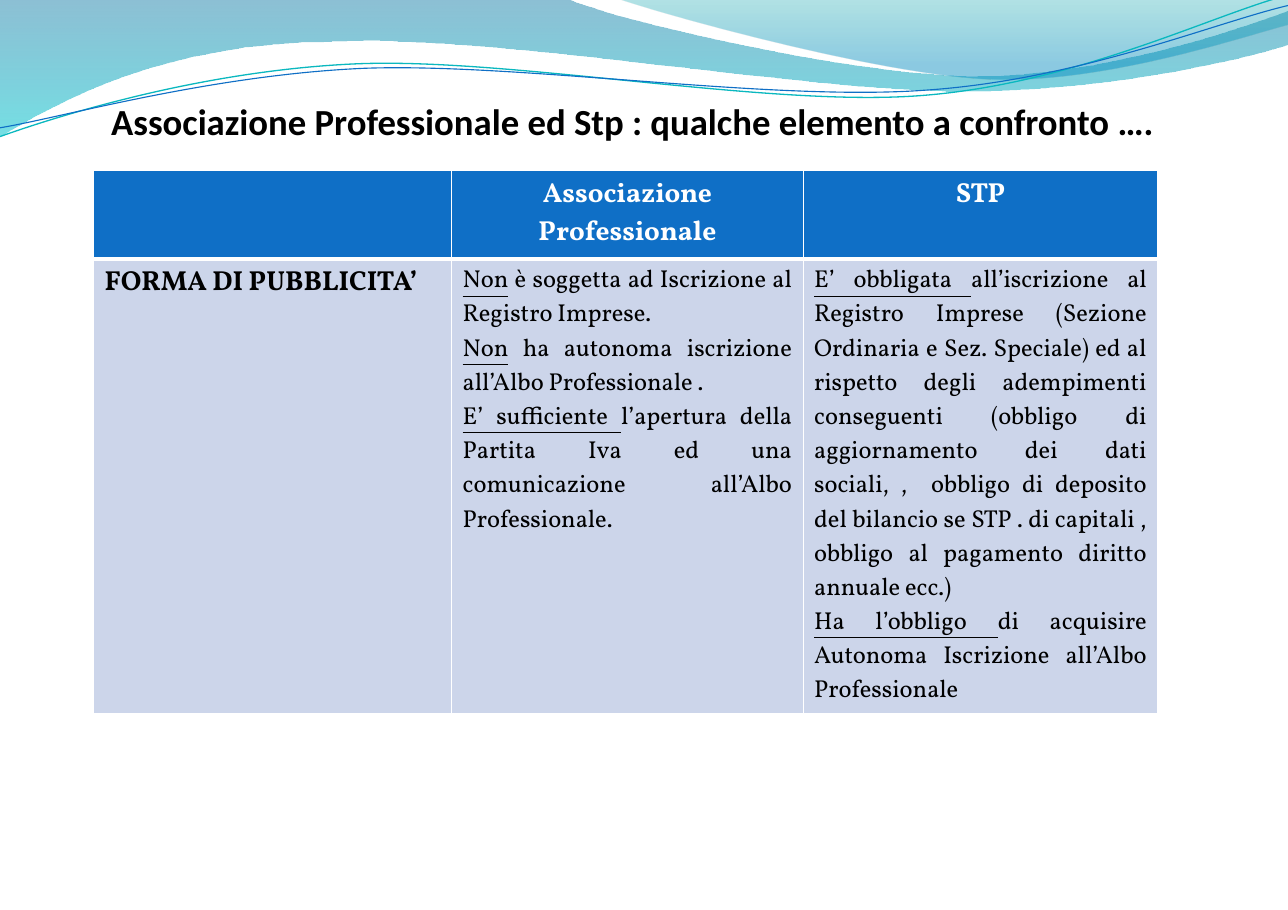
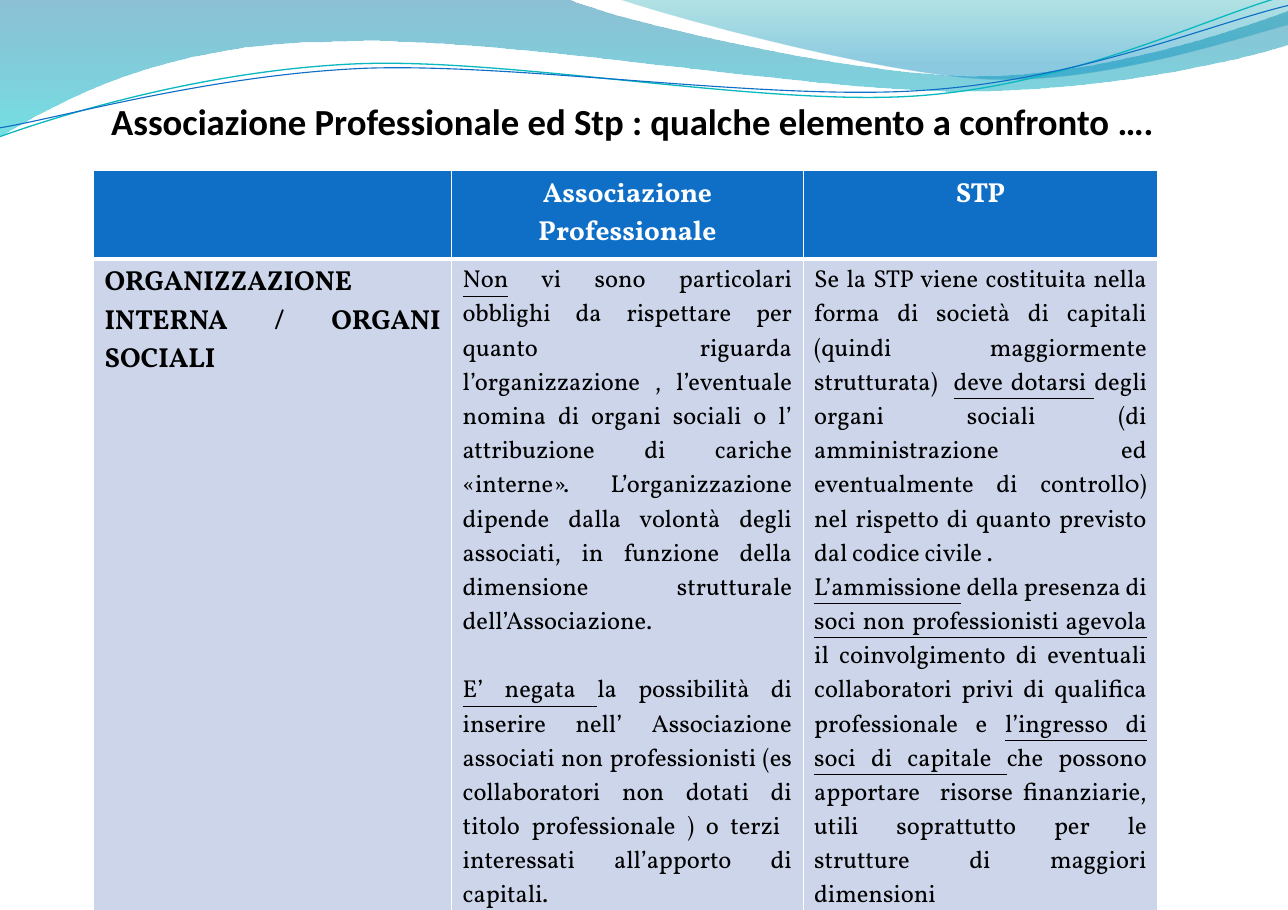
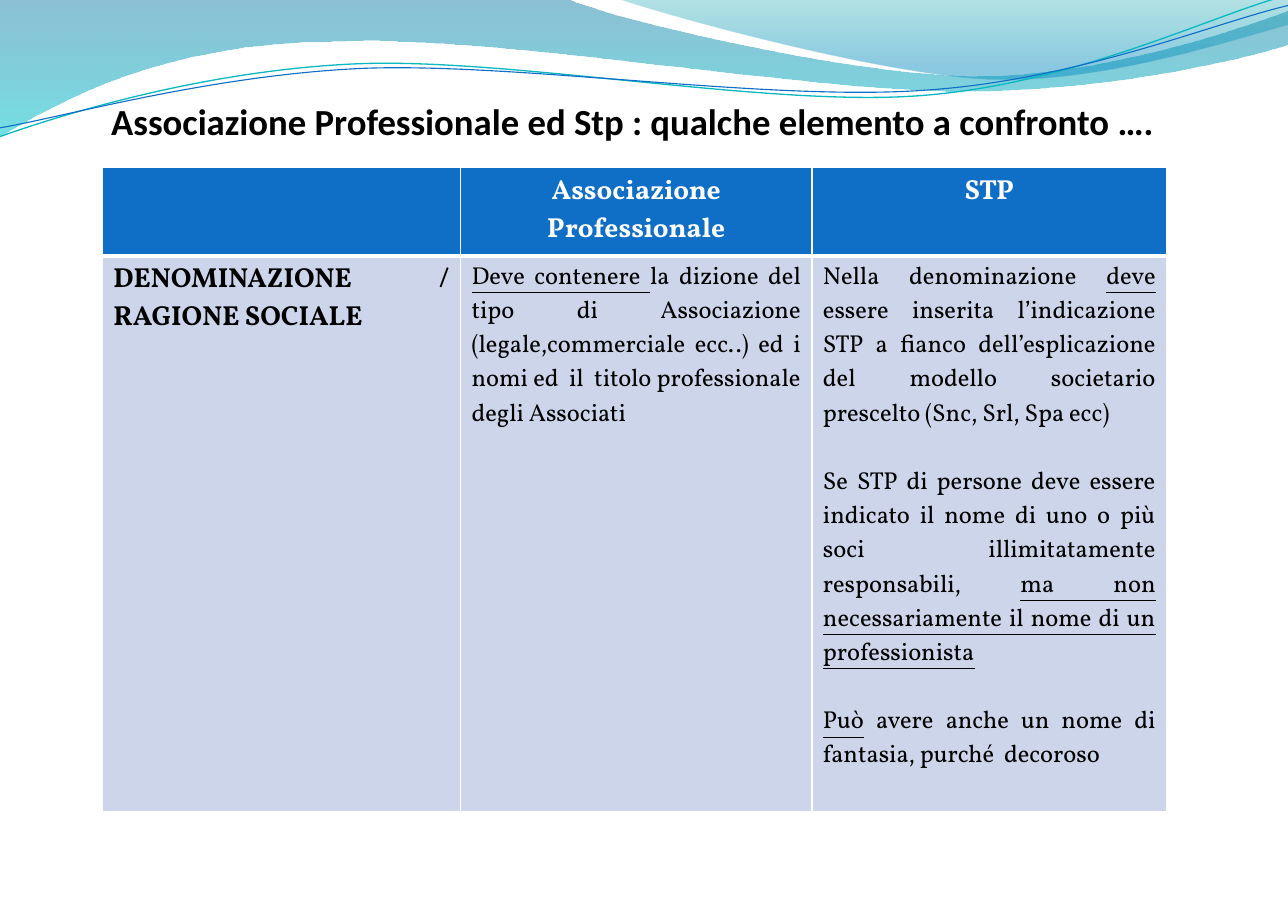
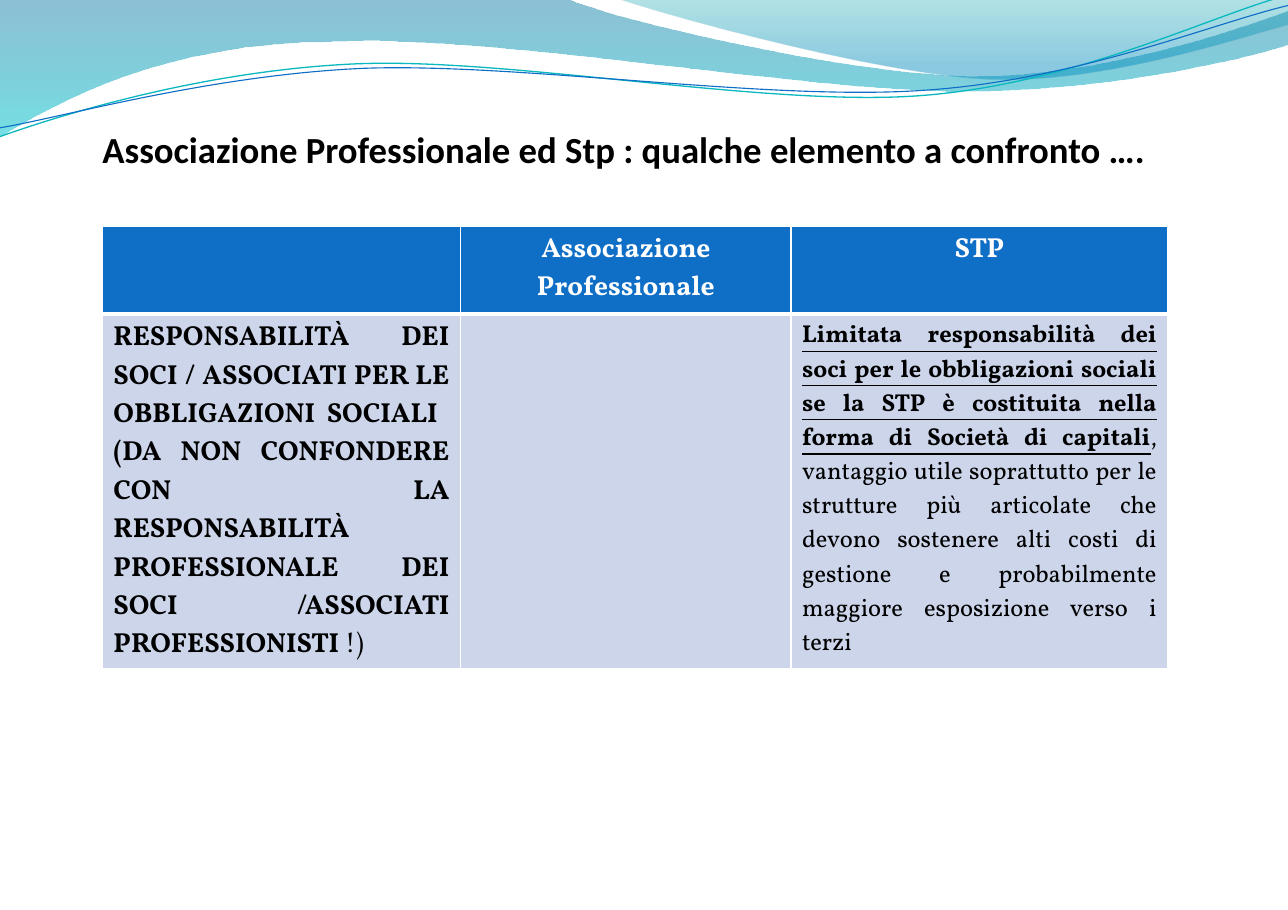
from lxml import etree
from pptx import Presentation
from pptx import util as u
from pptx.dml.color import RGBColor
from pptx.enum import text as t
from pptx.oxml.ns import qn

BLACK = RGBColor(0x00, 0x00, 0x00)
WHITE = RGBColor(0xFF, 0xFF, 0xFF)
BLUE = RGBColor(0x0F, 0x6F, 0xC6)
PALE = RGBColor(0xCC, 0xD5, 0xEA)
AQUA = RGBColor(0x0A, 0xB8, 0xBF)
DEEP = RGBColor(0x00, 0x74, 0xA1)
CYAN = RGBColor(0x00, 0xC6, 0xCF)
TEAL = RGBColor(0x00, 0xA1, 0xA9)
SKY = RGBColor(0x00, 0x8B, 0xBF)

LEFT, MID, JUST = t.PP_ALIGN.LEFT, t.PP_ALIGN.CENTER, t.PP_ALIGN.JUSTIFY
GAP = 22.3
TITLE = "Associazione Professionale ed Stp : qualche elemento a confronto …."
HEADS = ("", "Associazione Professionale", "STP")

BANDS = [
    ([(0, 0), (5.15, -0.01), (5.56, 0.18, 7.76, 0.69, 8.87, 0.69),
      (9.98, 0.69, 11.21, 0.28, 11.69, 0.1), (11.71, 0.4),
      (11.5, 0.48, 10.17, 0.83, 8.72, 0.83), (7.27, 0.83, 4.46, 0.31, 3.01, 0.38),
      (1.51, 0.39, 0.54, 0.91, -0.01, 1.25)],
     [(0, DEEP, 45), (1, CYAN, 55)]),
    ([(5.6, -0.01), (5.96, 0.12, 7.97, 0.68, 8.99, 0.72),
      (10.01, 0.76, 11.24, 0.35, 11.69, 0.23), (11.69, 0)],
     [(0, TEAL, 30), (0.8, SKY, 45)]),
]
WAVES = [
    ([(0, 1.24), (0.56, 1.04, 1.85, 0.64, 3.23, 0.58),
      (4.62, 0.52, 6.93, 0.97, 8.33, 0.87), (9.74, 0.77, 10.97, 0.15, 11.67, -0.04)],
     AQUA, 0.85),
    ([(0, 1.16), (0.55, 1.07, 1.91, 0.68, 3.31, 0.62),
      (4.71, 0.57, 6.98, 0.92, 8.38, 0.82), (9.78, 0.73, 11.01, 0.21, 11.69, 0.05)],
     BLUE, 0.75),
]


def write(frame, copy, font="Vollkorn", size=16, color=BLACK, bold=False, align=JUST):
    """Fill a frame: a bar flips bold, an underscore flips underline, an empty line adds a gap."""
    frame.word_wrap = True
    para, gap = None, 0
    for line in copy.split("\n"):
        if not line:
            gap = GAP
            continue
        para = frame.add_paragraph() if para else frame.paragraphs[0]
        para.alignment = align
        if gap:
            para.space_before = u.Pt(gap)
        gap = 0
        for i, part in enumerate(line.split("|")):
            for j, words in enumerate(part.split("_")):
                if not words:
                    continue
                run = para.add_run()
                run.text = words
                face = run.font
                face.name, face.size = font, u.Pt(size)
                face.color.rgb = color
                face.bold = bold != bool(i % 2)
                face.underline = bool(j % 2)


class Deck:
    """Holds the style and the current slide."""

    def __init__(self):
        """Open a blank deck of the right size."""
        self.deck = Presentation()
        self.deck.slide_width, self.deck.slide_height = u.Inches(11.69), u.Inches(8.26)
        self.base = self.deck.slide_layouts[6]
        for hold in list(self.base.placeholders):
            self.base.shapes.element.remove(hold.element)
        self.slide = None

    def page(self):
        """Start a new slide."""
        self.slide = self.deck.slides.add_slide(self.base)

    def curve(self, nodes, close):
        """Draw an outline whose six-number nodes are cubic curves."""
        nodes = [[u.Inches(n) for n in node] for node in nodes]
        pen = self.slide.shapes.build_freeform(*nodes[0])
        pen.add_line_segments([node[-2:] for node in nodes[1:]], close=close)
        shape = pen.convert_to_shape()
        shape.shadow.inherit = False
        for leg, node in zip(list(shape.element.iter(qn("a:lnTo"))), nodes[1:]):
            if len(node) == 6:
                bend = etree.Element(qn("a:cubicBezTo"))
                for x, y in zip(node[::2], node[1::2]):
                    etree.SubElement(bend, qn("a:pt"), x=str(x - shape.left),
                                     y=str(y - shape.top))
                leg.getparent().replace(leg, bend)
        return shape

    def band(self, nodes, stops):
        """Draw a see-through gradient band."""
        shape = self.curve(nodes, True)
        shape.fill.gradient()
        shape.fill.gradient_angle = 270
        for stop, (pos, color, _) in zip(shape.fill.gradient_stops, stops):
            stop.position, stop.color.rgb = pos, color
        for tint, (_, _, alpha) in zip(shape.element.iter(qn("a:srgbClr")), stops):
            etree.SubElement(tint, qn("a:alpha"), val=str(alpha * 1000))
        shape.line.fill.background()
        return shape

    def wave(self, nodes, color, width):
        """Draw a thin wavy line."""
        shape = self.curve(nodes, False)
        shape.fill.background()
        shape.line.color.rgb, shape.line.width = color, u.Pt(width)
        return shape

    def dress(self):
        """Put the bands and waves on the layout shared by all slides."""
        art = [self.band(*b) for b in BANDS] + [self.wave(*w) for w in WAVES]
        for shape in art:
            self.base.shapes.element.append(shape.element)

    def title(self, left, top):
        """Add the slide title."""
        box = self.slide.shapes.add_textbox(*map(u.Inches, (left, top, 9.67, 0.5)))
        frame = box.text_frame
        frame.margin_left = frame.margin_right = frame.margin_top = frame.margin_bottom = 0
        frame.vertical_anchor = t.MSO_ANCHOR.BOTTOM
        write(frame, TITLE, font="Calibri", size=24, bold=True, align=LEFT)

    def cell(self, cell, fill, top, foot):
        """Set the fill and white borders of a cell."""
        props = cell._tc.get_or_add_tcPr()
        for side, width in (("L", 1), ("R", 1), ("T", top), ("B", foot)):
            edge = etree.SubElement(props, qn("a:ln" + side), w=str(u.Pt(width)))
            solid = etree.SubElement(edge, qn("a:solidFill"))
            etree.SubElement(solid, qn("a:srgbClr"), val=str(WHITE))
        cell.fill.solid()
        cell.fill.fore_color.rgb = fill

    def table(self, left, top, cols, tall, body):
        """Add the two-row comparison table."""
        rows = (0.8, tall)
        place = map(u.Inches, (left, top, sum(cols), sum(rows)))
        grid = self.slide.shapes.add_table(2, 3, *place).table
        grid.horz_banding = False
        for row, high in zip(grid.rows, rows):
            row.height = u.Inches(high)
        for c, wide in enumerate(cols):
            grid.columns[c].width = u.Inches(wide)
            head, cell = grid.cell(0, c), grid.cell(1, c)
            self.cell(head, BLUE, 1, 3)
            self.cell(cell, PALE, 3, 1)
            write(head.text_frame, HEADS[c], size=18, color=WHITE, bold=True, align=MID)
            write(cell.text_frame, body[c], size=16 if c else 18, bold=not c)


EVEN = (3.25, 3.19, 3.22)
PAGES = [
    ((1.01, 0.8), (0.85, 1.55), EVEN, 4.13, (
        "FORMA DI PUBBLICITA’",
        "_Non_ è soggetta ad Iscrizione al Registro Imprese.\n"
        "_Non_ ha autonoma iscrizione all’Albo Professionale .\n"
        "_E’ sufficiente _l’apertura della Partita Iva ed una comunicazione "
        "all’Albo Professionale.",
        "_E’ obbligata _all’iscrizione al Registro Imprese (Sezione Ordinaria e Sez. "
        "Speciale) ed al rispetto degli adempimenti conseguenti (obbligo di "
        "aggiornamento dei dati sociali, ,  obbligo di deposito del bilancio se STP . "
        "di capitali , obbligo al pagamento diritto annuale ecc.)\n"
        "_Ha l’obbligo _di acquisire Autonoma Iscrizione all’Albo Professionale")),
    ((1.01, 0.8), (0.85, 1.55), EVEN, 6, (
        "ORGANIZZAZIONE INTERNA / ORGANI SOCIALI",
        "_Non_ vi sono particolari obblighi da rispettare per quanto riguarda "
        "l’organizzazione , l’eventuale nomina di organi sociali o l’ attribuzione di "
        "cariche «interne». L’organizzazione dipende dalla volontà degli associati, in "
        "funzione della dimensione strutturale dell’Associazione.\n\n"
        "_E’ negata _la possibilità di inserire nell’ Associazione associati non "
        "professionisti (es collaboratori non dotati di titolo professionale ) o terzi  "
        "interessati all’apporto di capitali.",
        "Se la STP viene costituita nella forma di società di capitali (quindi "
        "maggiormente strutturata)  _deve dotarsi _degli organi sociali (di "
        "amministrazione ed eventualmente di controll0) nel rispetto di quanto "
        "previsto dal codice civile .\n"
        "_L’ammissione_ della presenza di _soci non professionisti agevola _il "
        "coinvolgimento di eventuali collaboratori privi di qualifica professionale e "
        "_l’ingresso di soci di capitale _che possono apportare  risorse finanziarie, "
        "utili soprattutto per le strutture di maggiori dimensioni")),
    ((1.01, 0.8), (0.93, 1.52), EVEN, 5.05, (
        "DENOMINAZIONE / RAGIONE SOCIALE",
        "_Deve contenere _la dizione del tipo di Associazione (legale,commerciale "
        "ecc..) ed i nomi ed  il  titolo professionale degli Associati",
        "Nella denominazione _deve _essere inserita l’indicazione STP a fianco "
        "dell’esplicazione del modello societario prescelto (Snc, Srl, Spa ecc)\n\n"
        "Se STP di persone deve essere indicato il nome di uno o più soci "
        "illimitatamente responsabili, _ma non necessariamente il nome di un "
        "professionista_\n\n"
        "_Può_ avere anche un nome di fantasia, purché  decoroso")),
    ((0.93, 1.05), (0.93, 2.05), (3.25, 3, 3.42), 3.22, (
        "RESPONSABILITÀ DEI SOCI / ASSOCIATI PER LE OBBLIGAZIONI SOCIALI  (DA NON "
        "CONFONDERE CON LA RESPONSABILITÀ PROFESSIONALE DEI SOCI /ASSOCIATI "
        "PROFESSIONISTI |!)",
        "",
        "|_Limitata responsabilità dei soci per le obbligazioni sociali se la STP è "
        "costituita nella forma di Società di capitali_|, vantaggio utile soprattutto "
        "per le strutture più articolate che devono sostenere alti costi di gestione e "
        "probabilmente maggiore esposizione verso i terzi")),
]


def main():
    """Build and save the deck."""
    deck = Deck()
    for n, (head, spot, cols, tall, body) in enumerate(PAGES):
        deck.page()
        if n == 0:
            deck.dress()
        deck.title(*head)
        deck.table(*spot, cols, tall, body)
    deck.deck.save("out.pptx")


if __name__ == "__main__":
    main()
